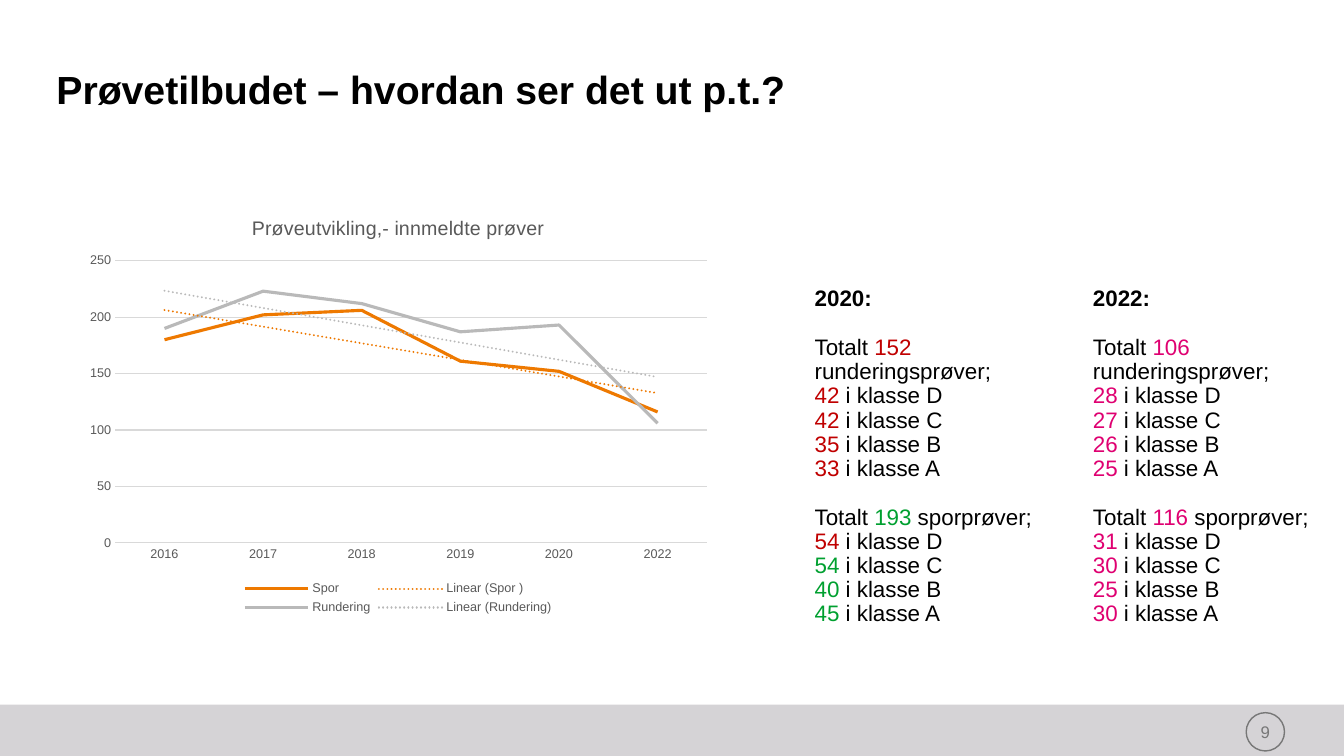
"""Build the slide on how the number of trials has developed."""
from dataclasses import dataclass

from lxml import etree
from pptx import Presentation
from pptx.chart.data import CategoryChartData
from pptx.dml.color import RGBColor
from pptx.enum.chart import XL_CHART_TYPE, XL_LEGEND_POSITION, XL_MARKER_STYLE, XL_TICK_MARK
from pptx.enum.dml import MSO_LINE
from pptx.enum.shapes import MSO_SHAPE
from pptx.enum.text import MSO_ANCHOR, PP_ALIGN
from pptx.oxml import parse_xml
from pptx.oxml.ns import nsdecls, qn
from pptx.util import Inches, Pt

LINE = XL_CHART_TYPE.LINE
BELOW = XL_LEGEND_POSITION.BOTTOM
NO_MARK = XL_MARKER_STYLE.NONE
NO_TICK = XL_TICK_MARK.NONE
SOLID = MSO_LINE.SOLID
RECT, OVAL = MSO_SHAPE.RECTANGLE, MSO_SHAPE.OVAL
BOTTOM, MIDDLE = MSO_ANCHOR.BOTTOM, MSO_ANCHOR.MIDDLE
LEFT, CENTER = PP_ALIGN.LEFT, PP_ALIGN.CENTER


@dataclass(frozen=True)
class Theme:
    """Colours, font and type sizes."""
    font: str = "Arial"
    black: str = "000000"
    white: str = "FFFFFF"
    band: str = "D5D3D6"
    ring: str = "777777"
    label: str = "595959"
    grid: str = "D9D9D9"
    red: str = "C00000"
    green: str = "00A030"
    pink: str = "DF0071"
    orange: str = "EE7900"
    gray: str = "B9B9B9"
    title: float = 28
    body: float = 16
    head: float = 14
    page: float = 12
    tick: float = 9
    pitch: float = 17.8


THEME = Theme()


@dataclass(frozen=True)
class Count:
    """A number and its colour."""
    value: int
    color: str


@dataclass(frozen=True)
class Group:
    """One kind of trial with its total and the counts of classes D to A."""
    kind: str
    total: Count
    counts: list[Count]


@dataclass(frozen=True)
class Year:
    """One column of the table."""
    name: str
    groups: list[Group]


@dataclass(frozen=True)
class Trend:
    """One series of the chart."""
    name: str
    values: list[int]
    color: str


def tint(color: str, *values: int) -> list[Count]:
    """Give several numbers one colour."""
    return [Count(value, color) for value in values]


YEARS = [
    Year("2020:", [
        Group("runderingsprøver;", Count(152, THEME.red), tint(THEME.red, 42, 42, 35, 33)),
        Group("sporprøver;", Count(193, THEME.green),
              tint(THEME.red, 54) + tint(THEME.green, 54, 40, 45)),
    ]),
    Year("2022:", [
        Group("runderingsprøver;", Count(106, THEME.pink), tint(THEME.pink, 28, 27, 26, 25)),
        Group("sporprøver;", Count(116, THEME.pink), tint(THEME.pink, 31, 30, 25, 30)),
    ]),
]
TRENDS = [
    Trend("Spor ", [180, 202, 206, 161, 152, 116], THEME.orange),
    Trend("Rundering", [190, 223, 212, 187, 193, 106], THEME.gray),
]


def style(font, size: float, color: str = THEME.black, bold: bool = False) -> None:
    """Set the face, size, colour and weight of a font."""
    font.name, font.size, font.bold = THEME.font, Pt(size), bold
    font.color.rgb = RGBColor.from_string(color)


def write(par, text: str, **form) -> None:
    """Add a formatted run to a paragraph."""
    run = par.add_run()
    run.text = text
    style(run.font, **form)


def stroke(line, color: str, width: float) -> None:
    """Set the colour and width of a line."""
    line.color.rgb = RGBColor.from_string(color)
    line.width = Pt(width)


def clear(frame, anchor: MSO_ANCHOR) -> None:
    """Remove the insets of a text frame and anchor it."""
    frame.margin_left = frame.margin_right = frame.margin_top = frame.margin_bottom = 0
    frame.vertical_anchor = anchor


def add_title(slide) -> None:
    """Add the slide title."""
    box = slide.shapes.add_textbox(Inches(0.56), Inches(0.7), Inches(12.21), Inches(0.42))
    frame = box.text_frame
    frame.word_wrap = True
    clear(frame, BOTTOM)
    par = frame.paragraphs[0]
    par.line_spacing = 0.9
    write(par, "Prøvetilbudet – hvordan ser det ut p.t.?", size=THEME.title, bold=True)


def add_foot(slide) -> None:
    """Add the footer band and the ringed page number."""
    band = slide.shapes.add_shape(RECT, 0, Inches(6.99), Inches(13.33), Inches(0.51))
    band.shadow.inherit = False
    band.fill.solid()
    band.fill.fore_color.rgb = RGBColor.from_string(THEME.band)
    band.line.fill.background()
    ring = slide.shapes.add_shape(OVAL, Inches(12.36), Inches(7.07), Inches(0.38), Inches(0.38))
    ring.shadow.inherit = False
    ring.fill.background()
    stroke(ring.line, THEME.ring, 1)
    clear(ring.text_frame, MIDDLE)
    par = ring.text_frame.paragraphs[0]
    par.alignment = CENTER
    write(par, "9", size=THEME.page, color=THEME.ring)


def add_line(frame, gap: bool = False):
    """Add a table paragraph, one line further down if a gap is asked for."""
    par = frame.add_paragraph()
    par.line_spacing = 0.97
    if gap:
        par.space_before = Pt(THEME.pitch)
    return par


def fill_cell(cell, year: Year) -> None:
    """Write the counts of one year into a cell."""
    cell.fill.solid()
    cell.fill.fore_color.rgb = RGBColor.from_string(THEME.white)
    frame, size = cell.text_frame, THEME.body
    head = frame.paragraphs[0]
    head.line_spacing = 0.97
    write(head, year.name, size=size, bold=True)
    for group in year.groups:
        par = add_line(frame, gap=True)
        write(par, "Totalt ", size=size)
        write(par, str(group.total.value), size=size, color=group.total.color)
        write(par, f" {group.kind}", size=size)
        for grade, count in zip("DCBA", group.counts):
            par = add_line(frame)
            write(par, str(count.value), size=size, color=count.color)
            write(par, f" i klasse {grade}", size=size)


def add_years(slide) -> None:
    """Add the table with one column for each year."""
    table = slide.shapes.add_table(1, len(YEARS), Inches(7.98), Inches(2.8),
                                   Inches(5.35), Inches(3.91)).table
    for col, width, cell, year in zip(table.columns, (2.76, 2.59), table.rows[0].cells, YEARS):
        col.width = Inches(width)
        fill_cell(cell, year)


def add_trend(series, trend: Trend) -> None:
    """Style a series and give it a dotted linear trend line."""
    series.smooth = False
    series.marker.style = NO_MARK
    stroke(series.format.line, trend.color, 2.25)
    series.format.line.dash_style = SOLID
    node = parse_xml(
        f'<c:trendline {nsdecls("c", "a")}><c:spPr><a:ln w="{Pt(1.5)}" cap="rnd"><a:solidFill>'
        f'<a:srgbClr val="{trend.color}"/></a:solidFill><a:prstDash val="sysDot"/></a:ln></c:spPr>'
        '<c:trendlineType val="linear"/><c:dispRSqr val="0"/><c:dispEq val="0"/></c:trendline>')
    series._element.find(qn("c:cat")).addprevious(node)


def place_plot(chart) -> None:
    """Fix the inner plot area within the chart."""
    plot = chart._chartSpace.chart.plotArea
    for old in plot.findall(qn("c:layout")):
        plot.remove(old)
    layout = etree.Element(qn("c:layout"))
    manual = etree.SubElement(layout, qn("c:manualLayout"))
    for tag, value in (("layoutTarget", "inner"), ("xMode", "edge"), ("yMode", "edge"),
                       ("x", "0.06"), ("y", "0.15"), ("w", "0.92"), ("h", "0.67")):
        etree.SubElement(manual, qn(f"c:{tag}"), val=value)
    plot.insert(0, layout)


def add_graph(slide) -> None:
    """Add the line chart of entered trials."""
    data = CategoryChartData()
    data.categories = ["2016", "2017", "2018", "2019", "2020", "2022"]
    for trend in TRENDS:
        data.add_series(trend.name, trend.values)
    chart = slide.shapes.add_chart(LINE, Inches(0.76), Inches(1.96), Inches(6.38),
                                   Inches(4.18), data).chart
    style(chart.font, THEME.tick, THEME.label)
    chart.has_title = True
    write(chart.chart_title.text_frame.paragraphs[0], "Prøveutvikling,- innmeldte prøver",
          size=THEME.head, color=THEME.label)
    chart.has_legend = True
    chart.legend.position = BELOW
    chart.legend.include_in_layout = False
    style(chart.legend.font, THEME.tick, THEME.label)
    for axis in (chart.category_axis, chart.value_axis):
        axis.major_tick_mark = axis.minor_tick_mark = NO_TICK
        style(axis.tick_labels.font, THEME.tick, THEME.label)
    stroke(chart.category_axis.format.line, THEME.grid, 0.75)
    scale = chart.value_axis
    scale.minimum_scale, scale.maximum_scale, scale.major_unit = 0, 250, 50
    scale.format.line.fill.background()
    stroke(scale.major_gridlines.format.line, THEME.grid, 0.75)
    chart.plots[0].vary_by_categories = False
    for series, trend in zip(chart.plots[0].series, TRENDS):
        add_trend(series, trend)
    place_plot(chart)


def main() -> None:
    """Build and save the slide."""
    deck = Presentation()
    deck.slide_width, deck.slide_height = Inches(13.33), Inches(7.5)
    slide = deck.slides.add_slide(deck.slide_layouts[6])
    for draw in (add_foot, add_title, add_years, add_graph):
        draw(slide)
    deck.save("out.pptx")


if __name__ == "__main__":
    main()
